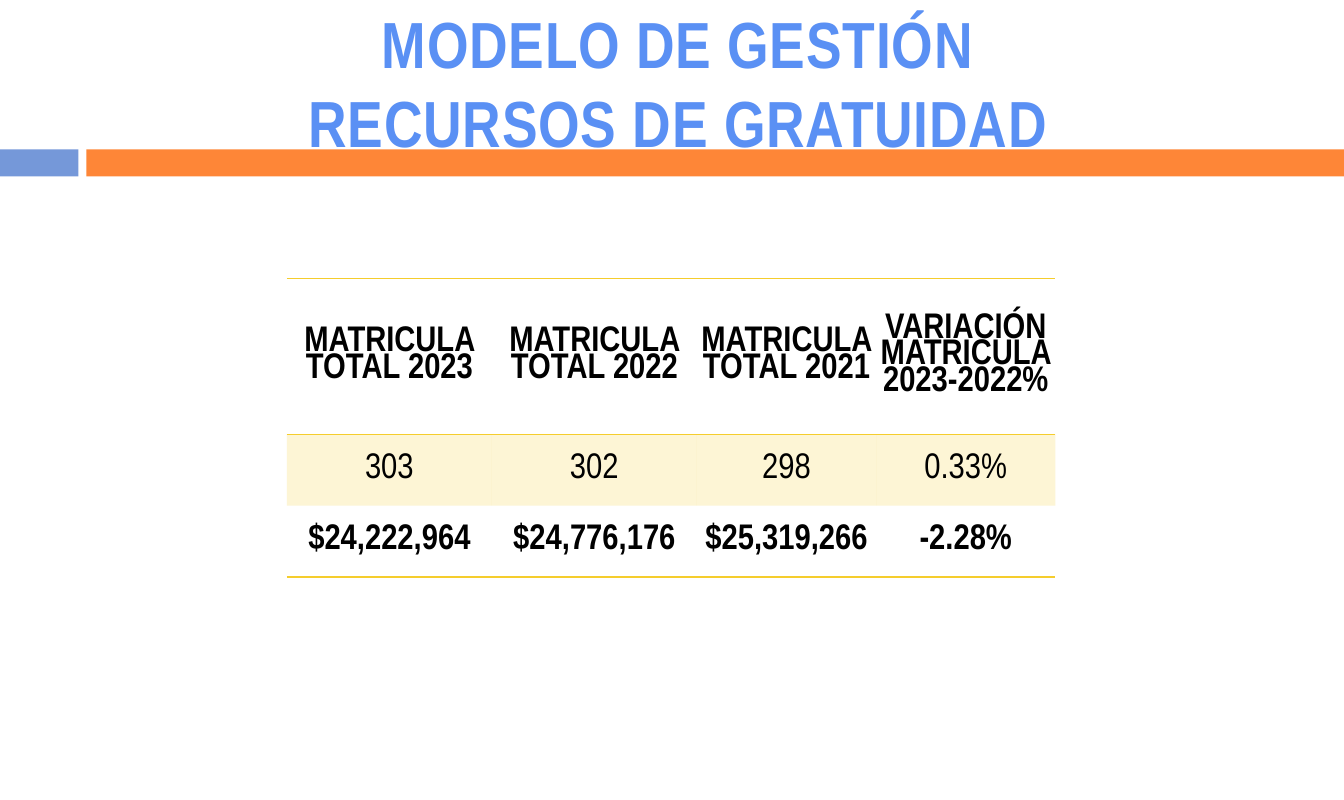
"""Build the slide on enrolment and free-tuition resources."""
from lxml.etree import SubElement
from pptx import Presentation
from pptx.dml.color import RGBColor
from pptx.enum.shapes import MSO_SHAPE
from pptx.enum.text import MSO_ANCHOR, PP_ALIGN
from pptx.oxml import parse_xml
from pptx.oxml.ns import nsdecls, qn
from pptx.util import Cm, Pt

BLUE = RGBColor(0x75, 0x98, 0xD9)
ORANGE = RGBColor(0xFE, 0x86, 0x37)
YELLOW = RGBColor(0xF5, 0xCD, 0x2D)
BLACK = RGBColor(0, 0, 0)
TITLE_LIGHT = RGBColor(0x5A, 0x90, 0xF4)
TITLE_DARK = RGBColor(0x3C, 0x65, 0xB0)
FONT = "Arial Narrow"
PLAIN_TABLE_STYLE = "{2D5ABB26-0587-4C30-8999-92F81FD0307C}"

COLUMN_WIDTHS = (4.88, 4.88, 4.27, 4.27)
ROW_HEIGHTS = (3.71, 1.7, 1.7)
ENROLMENT = (
    ("MATRICULA TOTAL 2023", "MATRICULA TOTAL 2022", "MATRICULA TOTAL 2021",
     "VARIACIÓN MATRICULA 2023-2022%"),
    ("303", "302", "298", "0.33%"),
    ("$24,222,964", "$24,776,176", "$25,319,266", "-2.28%"),
)
ROW_BORDERS = (("lnT", "lnB"), (), ("lnB",))
SHADED_ROW = 1


def add_band(slide, left, width, color):
    """Add one part of the band under the title."""
    band = slide.shapes.add_shape(
        MSO_SHAPE.RECTANGLE, Cm(left), Cm(3.56), Cm(width), Cm(0.64))
    band.shadow.inherit = False
    band.fill.solid()
    band.fill.fore_color.rgb = color
    band.line.fill.background()


def add_title(slide, text):
    """Add the centred title with its gradient letters."""
    box = slide.shapes.add_textbox(Cm(1.75), Cm(0.36), Cm(28.8), Cm(3.18))
    frame = box.text_frame
    frame.word_wrap = True
    frame.vertical_anchor = MSO_ANCHOR.MIDDLE
    paragraph = frame.paragraphs[0]
    paragraph.text = text
    paragraph.alignment = PP_ALIGN.CENTER
    for run in paragraph.runs:
        font = run.font
        font.name, font.size, font.bold = FONT, Pt(44), True
        font.fill.gradient()
        font.fill.gradient_angle = 270
        stops = zip(font.fill.gradient_stops, (0.25, 1), (TITLE_LIGHT, TITLE_DARK))
        for stop, position, color in stops:
            stop.position = position
            stop.color.rgb = color
        run._r.get_or_add_rPr().set("spc", "50")


def format_cell(cell, text, bold):
    """Write and style the text of one cell."""
    cell.vertical_anchor = MSO_ANCHOR.MIDDLE
    cell.margin_left = cell.margin_right = cell.margin_top = Cm(0.03)
    cell.margin_bottom = 0
    paragraph = cell.text_frame.paragraphs[0]
    paragraph.text = text
    paragraph.alignment = PP_ALIGN.CENTER
    paragraph.line_spacing = 0.8
    font = paragraph.runs[0].font
    font.name, font.size, font.bold = FONT, Pt(24), bold
    font.color.rgb = BLACK


def fill_cell(cell, shaded):
    """Tint a shaded cell and leave any other one clear."""
    if not shaded:
        cell.fill.background()
        return
    cell.fill.solid()
    cell.fill.fore_color.rgb = YELLOW
    color = cell._tc.tcPr.find(f"{qn('a:solidFill')}/{qn('a:srgbClr')}")
    SubElement(color, qn("a:alpha")).set("val", "20000")


def add_borders(cell, sides):
    """Draw yellow lines on the given sides of a cell."""
    for index, side in enumerate(sides):
        cell._tc.get_or_add_tcPr().insert(index, parse_xml(
            f'<a:{side} {nsdecls("a")} w="12700"><a:solidFill>'
            f'<a:srgbClr val="{YELLOW}"/></a:solidFill></a:{side}>'))


def add_enrolment_table(slide):
    """Add the table of enrolment and resources by year."""
    shape = slide.shapes.add_table(
        len(ROW_HEIGHTS), len(COLUMN_WIDTHS), Cm(6.83), Cm(6.63),
        Cm(sum(COLUMN_WIDTHS)), Cm(sum(ROW_HEIGHTS)))
    shape.element.find(f".//{qn('a:tableStyleId')}").text = PLAIN_TABLE_STYLE
    table = shape.table
    for column, width in zip(table.columns, COLUMN_WIDTHS):
        column.width = Cm(width)
    for index, (row, height) in enumerate(zip(table.rows, ROW_HEIGHTS)):
        row.height = Cm(height)
        shaded = index == SHADED_ROW
        for cell, text in zip(row.cells, ENROLMENT[index]):
            format_cell(cell, text, not shaded)
            fill_cell(cell, shaded)
            add_borders(cell, ROW_BORDERS[index])


def main():
    """Build and save the slide."""
    presentation = Presentation()
    presentation.slide_width = Cm(32)
    presentation.slide_height = Cm(19.05)
    slide = presentation.slides.add_slide(presentation.slide_layouts[6])
    add_band(slide, 0, 1.87, BLUE)
    add_band(slide, 2.06, 29.94, ORANGE)
    add_title(slide, "MODELO DE GESTIÓN\vRECURSOS DE GRATUIDAD")
    add_enrolment_table(slide)
    presentation.save("out.pptx")


if __name__ == "__main__":
    main()
